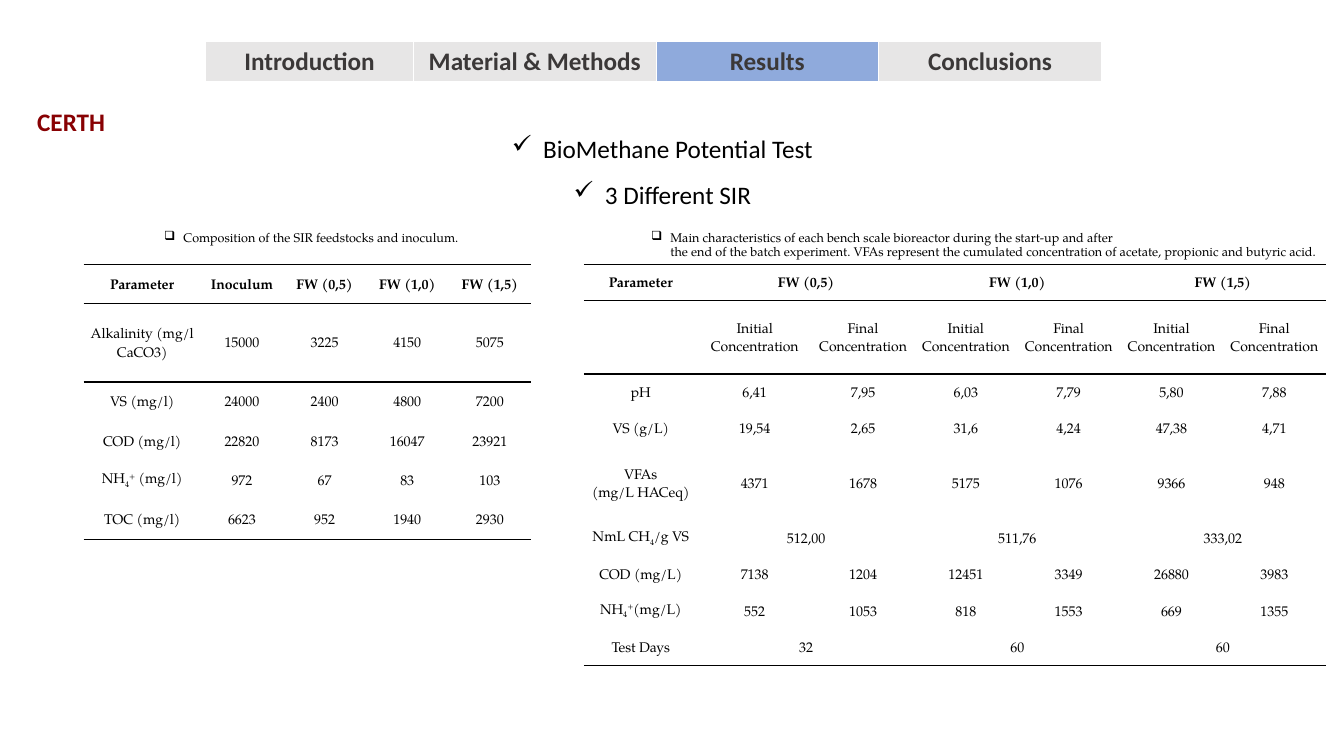
"""Build the results slide on the biomethane potential test."""
from dataclasses import dataclass
from typing import Any, Optional

import pptx
import pptx.dml.color
import pptx.enum.text
import pptx.oxml
import pptx.oxml.ns
import pptx.util
from pptx.util import Inches

ALIGN = pptx.enum.text.PP_ALIGN
ANCHOR = pptx.enum.text.MSO_ANCHOR
SANS, SERIF = "Calibri", "TeX Gyre Pagella"
BLACK, WHITE, GREY, BLUE = "000000", "FFFFFF", "E7E6E6", "8FAADC"
NO_STYLE = "{2D5ABB26-0587-4C30-8999-92F81FD0307C}"
BASELINES = {"_": "-25000", "^": "30000"}


@dataclass
class Label:
    text: str
    left: float
    top: float
    width: float
    height: float
    size: int = 18
    font: str = SANS
    color: str = BLACK
    bold: bool = False
    align: Any = ALIGN.CENTER
    bullet: str = ""
    indent: float = 0.31
    hang: float = 0.31
    wrap: bool = False
    spacing: float = 1.0


@dataclass
class DataTable:
    left: float
    top: float
    widths: list[float]
    heights: list[float]
    rows: list[list[Optional[str]]]


def rgb(value: str) -> pptx.dml.color.RGBColor:
    return pptx.dml.color.RGBColor.from_string(value)


def format_run(r: Any, size: int, font: str, color: str, bold: bool) -> None:
    r.font.size = pptx.util.Pt(size)
    r.font.name = font
    r.font.bold = bold
    r.font.color.rgb = rgb(color)


def add_bullet(p: Any, char: str, indent: float, hang: float) -> None:
    pPr = p._p.get_or_add_pPr()
    pPr.set("marL", str(Inches(indent)))
    pPr.set("indent", str(-Inches(hang)))
    pPr.append(pptx.oxml.parse_xml(
        f'<a:buChar {pptx.oxml.ns.nsdecls("a")} char="{char}"/>'))


def draw_label(sp: Any, label: Label) -> None:
    sp.left, sp.top = Inches(label.left), Inches(label.top)
    sp.width, sp.height = Inches(label.width), Inches(label.height)
    tf = sp.text_frame
    tf.text = label.text
    tf.word_wrap = label.wrap
    tf.auto_size = pptx.enum.text.MSO_AUTO_SIZE.NONE
    tf.vertical_anchor = ANCHOR.TOP
    p = tf.paragraphs[0]
    p.alignment = label.align
    p.line_spacing = label.spacing
    if label.bullet:
        add_bullet(p, label.bullet, label.indent, label.hang)
    for r in p.runs:
        format_run(r, label.size, label.font, label.color, label.bold)


def set_borders(cell: Any, color: str, **widths: float) -> None:
    tcPr = cell._tc.get_or_add_tcPr()
    sides = [side for side in "LRTB" if side in widths]
    for index, side in enumerate(sides):
        tcPr.insert(index, pptx.oxml.parse_xml(
            f'<a:ln{side} {pptx.oxml.ns.nsdecls("a")} w="{int(widths[side] * 12700)}">'
            f'<a:solidFill><a:srgbClr val="{color}"/></a:solidFill></a:ln{side}>'))


def add_plain_table(slide: Any, left: float, top: float, widths: list[float],
                    heights: list[float]) -> Any:
    table = slide.shapes.add_table(
        len(heights), len(widths), Inches(left), Inches(top),
        Inches(sum(widths)), Inches(sum(heights))).table
    table.first_row = table.horz_banding = False
    table._tbl.tblPr.find(pptx.oxml.ns.qn("a:tableStyleId")).text = NO_STYLE
    for column, width in zip(table.columns, widths):
        column.width = Inches(width)
    for row, height in zip(table.rows, heights):
        row.height = Inches(height)
    return table


def fill_cell(cell: Any, text: str, bold: bool) -> None:
    tf = cell.text_frame
    for index, line in enumerate(text.split("\n")):
        p = tf.add_paragraph() if index else tf.paragraphs[0]
        p.alignment = ALIGN.CENTER
        p.line_spacing = pptx.util.Pt(13)
        for piece in filter(None, line.split("|")):
            r = p.add_run()
            r.text = piece[1:] if piece[0] in BASELINES else piece
            format_run(r, 10, SERIF, BLACK, bold)
            if piece[0] in BASELINES:
                r.font._element.set("baseline", BASELINES[piece[0]])


def draw_data_table(slide: Any, data: DataTable) -> None:
    table = add_plain_table(slide, data.left, data.top, data.widths, data.heights)
    last = len(data.rows) - 1
    for i, row in enumerate(data.rows):
        for j, text in enumerate(row):
            cell = table.cell(i, j)
            cell.margin_left = cell.margin_right = 0
            cell.margin_top = cell.margin_bottom = 0
            cell.vertical_anchor = ANCHOR.MIDDLE
            cell.fill.background()
            edges = {"T": 1} if i < 2 else {}
            if i in (0, last):
                edges["B"] = 1
            set_borders(cell, BLACK, **edges)
            if text is None:
                table.cell(i, j - 1).merge(cell)
            else:
                fill_cell(cell, text, bold=i == 0)


def draw_navigation(slide: Any, sections: dict[str, float], current: str) -> None:
    table = add_plain_table(slide, 2.04, 0.41, list(sections.values()), [0.41])
    for j, name in enumerate(sections):
        cell = table.cell(0, j)
        cell.text_frame.text = name
        cell.fill.solid()
        cell.fill.fore_color.rgb = rgb(BLUE if name == current else GREY)
        set_borders(cell, WHITE, L=1, R=1, T=1, B=3)
        p = cell.text_frame.paragraphs[0]
        p.alignment = ALIGN.CENTER
        format_run(p.runs[0], 18, SANS, "3B3838", True)


TITLE = Label("BioMethane Potential Test", 4.94, 1.27, 3.26, 0.4, bullet="✓")
CAPTION = dict(size=9, font=SERIF, bullet="❑", indent=2, hang=0.19, wrap=True, spacing=0.95)
LABELS = [
    Label("CERTH", 0.27, 1.01, 0.88, 0.4, color="880103", bold=True, align=ALIGN.LEFT),
    Label("3 Different SIR", 5.57, 1.73, 2, 0.4, bullet="✓"),
    Label("Composition of the SIR feedstocks and inoculum.",
          -0.28, 2.24, 9.84, 0.24, align=ALIGN.JUSTIFY, **CAPTION),
    Label("Main characteristics of each bench scale bioreactor during the start-up and after\v"
          "the end of the batch experiment. VFAs represent the cumulated concentration of "
          "acetate, propionic and butyric acid.",
          4.55, 2.24, 9.84, 0.39, align=ALIGN.LEFT, **CAPTION),
]
BIOREACTORS = DataTable(
    5.79, 2.62, [1.13] * 2 + [1.02] * 5, [0.36, 0.73, 0.36, 0.36, 0.73] + [0.36] * 4, [
        ["Parameter", "FW (0,5)", None, "FW (1,0)", None, "FW (1,5)", None],
        [""] + ["Initial\nConcentration", "Final\nConcentration"] * 3,
        ["pH", "6,41", "7,95", "6,03", "7,79", "5,80", "7,88"],
        ["VS (g/L)", "19,54", "2,65", "31,6", "4,24", "47,38", "4,71"],
        ["VFAs\n(mg/L HACeq)", "4371", "1678", "5175", "1076", "9366", "948"],
        ["ΝmL CH|_4|/g VS", "512,00", None, "511,76", None, "333,02", None],
        ["COD (mg/L)", "7138", "1204", "12451", "3349", "26880", "3983"],
        ["NH|_4|^+|(mg/L)", "552", "1053", "818", "1553", "669", "1355"],
        ["Test Days", "32", None, "60", None, "60", None],
    ])
FEEDSTOCKS = DataTable(
    0.83, 2.62, [1.16] + [0.82] * 4, [0.39, 0.78] + [0.39] * 4, [
        ["Parameter", "Inoculum", "FW (0,5)", "FW (1,0)", "FW (1,5)"],
        ["Alkalinity (mg/l CaCO3)", "15000", "3225", "4150", "5075"],
        ["VS (mg/l)", "24000", "2400", "4800", "7200"],
        ["COD (mg/l)", "22820", "8173", "16047", "23921"],
        ["NH|_4|^+| (mg/l)", "972", "67", "83", "103"],
        ["TOC (mg/l)", "6623", "952", "1940", "2930"],
    ])
SECTIONS = {"Introduction": 2.06, "Material & Methods": 2.41, "Results": 2.2, "Conclusions": 2.22}


def main() -> None:
    prs = pptx.Presentation()
    prs.slide_width, prs.slide_height = Inches(13.33), Inches(7.5)
    slide = prs.slides.add_slide(prs.slide_layouts[5])
    draw_label(slide.shapes.title, TITLE)
    draw_navigation(slide, SECTIONS, current="Results")
    for label in LABELS:
        draw_label(slide.shapes.add_textbox(0, 0, 0, 0), label)
    for data in (BIOREACTORS, FEEDSTOCKS):
        draw_data_table(slide, data)
    prs.save("out.pptx")


if __name__ == "__main__":
    main()
